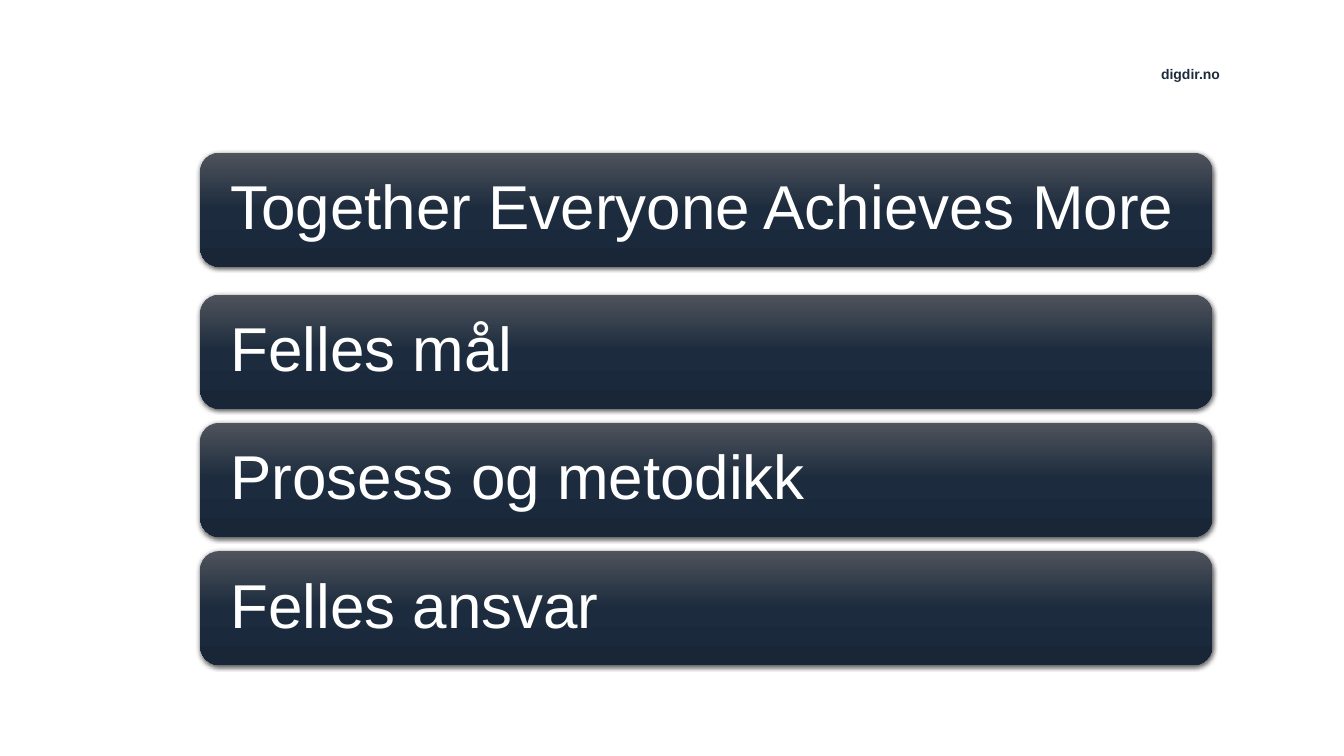
import copy

import lxml.etree
import pptx
import pptx.dml.color
import pptx.enum.shapes
import pptx.enum.text
import pptx.oxml.ns
import pptx.util

Pt = pptx.util.Pt
RGB = pptx.dml.color.RGBColor.from_string
qn = pptx.oxml.ns.qn
ANCHOR = pptx.enum.text.MSO_ANCHOR
ALIGN = pptx.enum.text.PP_ALIGN

COLORS = {"top": "4F535C", "middle": "1C2B3D", "bottom": "182638",
          "shadow": "000000", "bar_text": "FFFFFF", "site": "1E2B3C"}


def set_text(s, text, color, frame_format, paragraph_format, font_format):
    tf = s.text_frame
    p = tf.paragraphs[0]
    r = p.add_run()
    r.text = text
    r.font.color.rgb = RGB(COLORS[color])
    for target, values in ((tf, frame_format), (p, paragraph_format), (r.font, font_format)):
        for name, value in values.items():
            setattr(target, name, value)


prs = pptx.Presentation()
prs.slide_width, prs.slide_height = Pt(1280.16), Pt(720)
slide = prs.slides.add_slide(prs.slide_layouts[6])

# Web address at the top right
s = slide.shapes.add_textbox(Pt(1087.92), Pt(59.04), Pt(81.36), Pt(23.76))
set_text(s, "digdir.no", "site",
         {"word_wrap": False},
         {"alignment": ALIGN.RIGHT},
         {"name": "Arial", "size": Pt(13.3), "bold": True})

# Headline bar, then three evenly spaced bars
BAR_HEIGHT = 108.6
PITCH = 122.1
FIRST_TOP = 280.6
bars = [("Together Everyone Achieves More", 145.4)]
for i, text in enumerate(["Felles mål", "Prosess og metodikk", "Felles ansvar"]):
    bars.append((text, FIRST_TOP + i * PITCH))

for text, top in bars:
    s = slide.shapes.add_shape(pptx.enum.shapes.MSO_SHAPE.ROUNDED_RECTANGLE,
                               Pt(190.8), Pt(top), Pt(964), Pt(BAR_HEIGHT))
    s.line.fill.background()

    # Three-stop gradient from top to bottom
    s.fill.gradient()
    s.fill.gradient_angle = 270
    sp = s._element.spPr
    stops = sp.find(".//" + qn("a:gsLst"))
    stops.insert(1, copy.deepcopy(stops[0]))
    for stop, (name, position) in zip(s.fill.gradient_stops,
                                      [("top", 0), ("middle", 0.5), ("bottom", 1)]):
        stop.color.rgb = RGB(COLORS[name])
        stop.position = position

    # Soft shadow below
    s.shadow.inherit = False
    shadow = lxml.etree.SubElement(sp.find(qn("a:effectLst")), qn("a:outerShdw"),
                                   blurRad=str(Pt(4.5)), dist=str(Pt(1.5)),
                                   dir="5400000", rotWithShape="0")
    color = lxml.etree.SubElement(shadow, qn("a:srgbClr"), val=COLORS["shadow"])
    lxml.etree.SubElement(color, qn("a:alpha"), val="63000")

    set_text(s, text, "bar_text",
             {"word_wrap": True, "vertical_anchor": ANCHOR.MIDDLE,
              "margin_left": Pt(23.3), "margin_right": Pt(23.3),
              "margin_top": Pt(18), "margin_bottom": Pt(18)},
             {"alignment": ALIGN.LEFT, "line_spacing": 0.9},
             {"name": "Arial", "size": Pt(59)})

prs.save("out.pptx")
